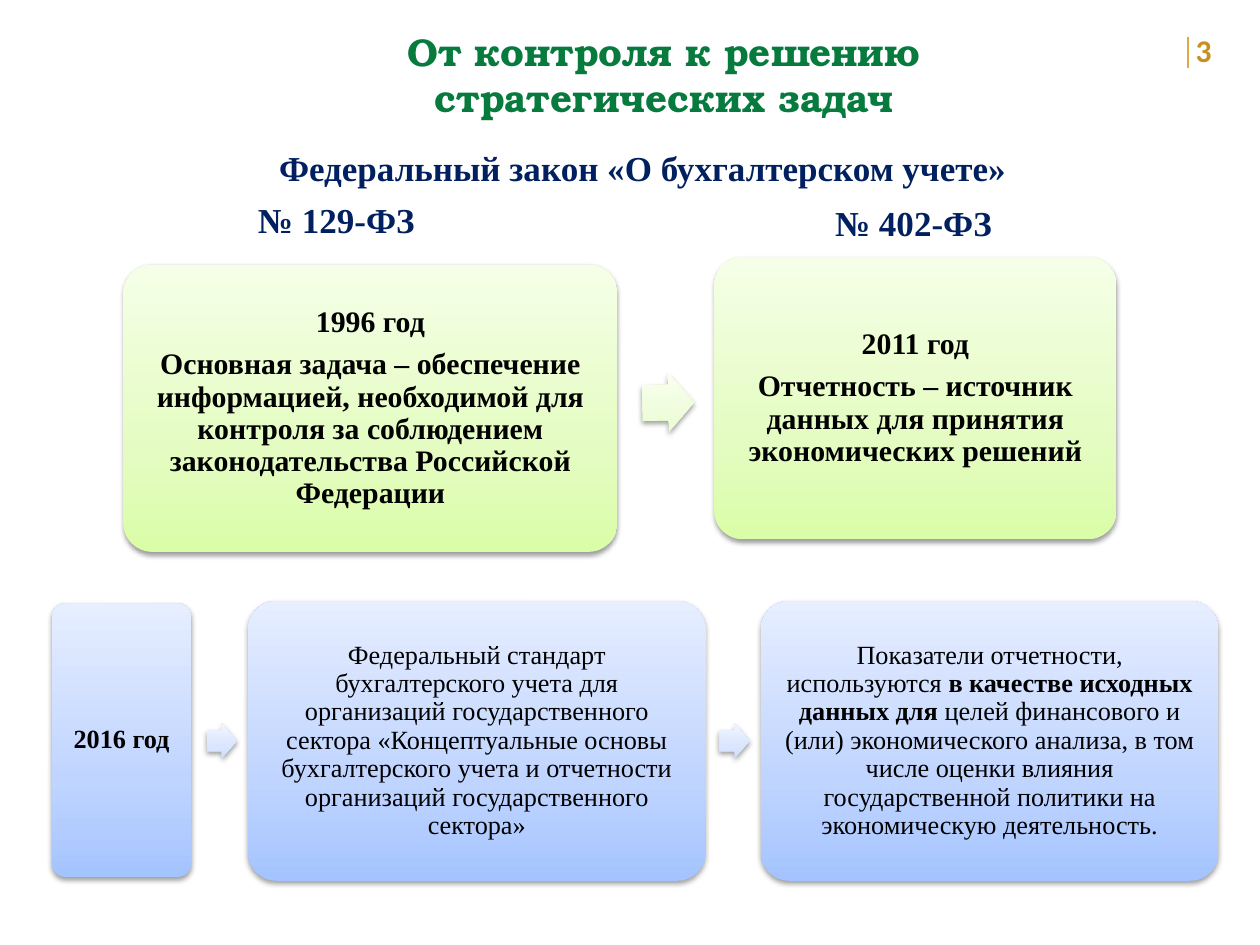
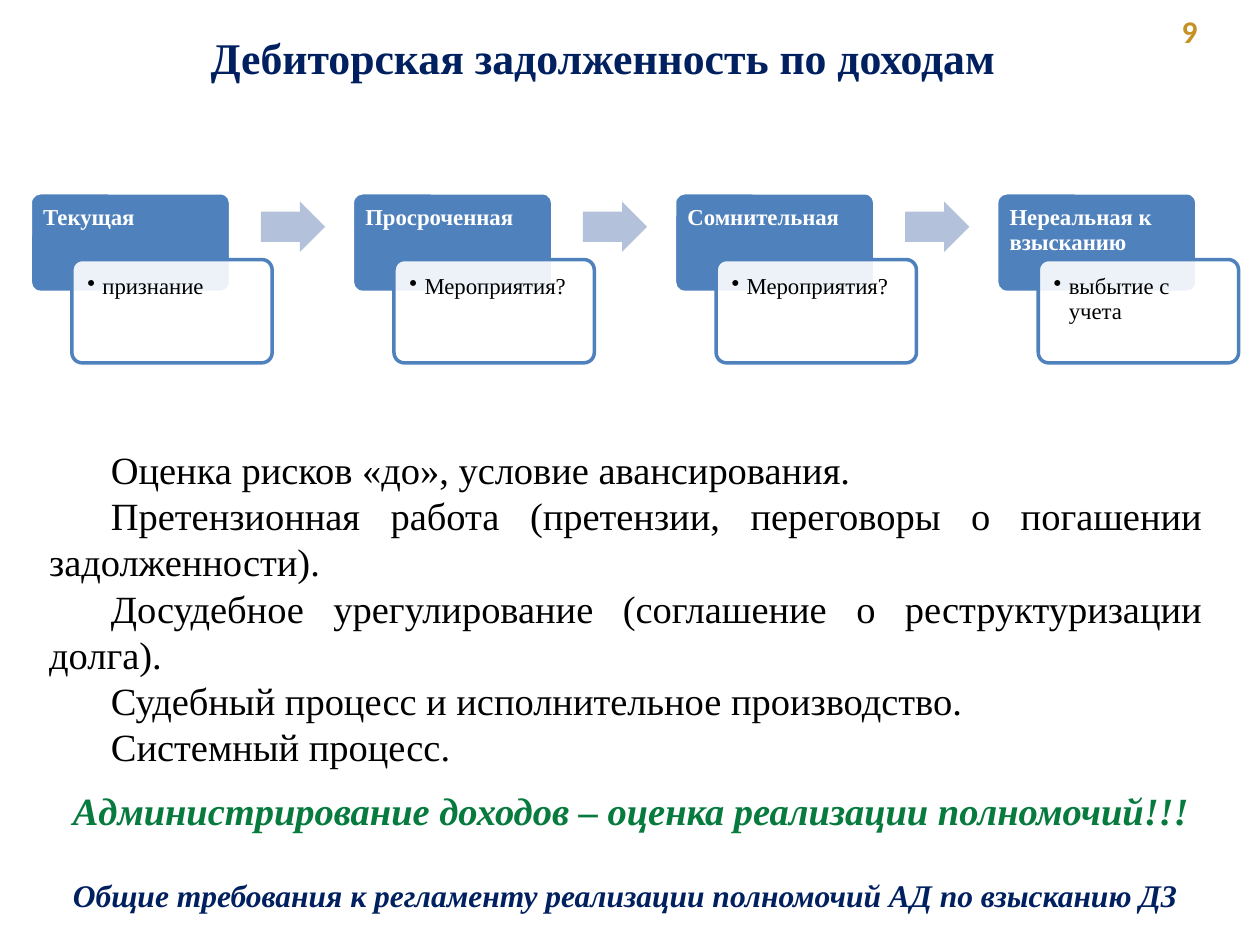
"""Build two slides on accounting law and on receivables."""
from lxml.etree import SubElement as Sub
from pptx import Presentation
from pptx.dml.color import RGBColor as RGB
from pptx.enum.shapes import MSO_CONNECTOR as CONN, MSO_SHAPE as SHAPE
from pptx.enum.text import MSO_ANCHOR as ANCHOR, MSO_AUTO_SIZE as AUTO, PP_ALIGN as AL
from pptx.oxml.ns import qn
from pptx.util import Inches, Pt

COLORS = {
    "green": "077A3E", "navy": "002060", "gold": "C79023", "rule": "DEAA46",
    "black": "000000", "white": "FFFFFF", "blue": "4F81BD", "pale": "B3C1DB",
}
GRADIENTS = {
    "lime": ("DAFDA7", "E4FCC2", "F5FFE7"),
    "lime_arrow": ("E9FDCF", "EFFDDC", "F9FFF1"),
    "sky": ("A4C4FF", "BFD4FF", "E6EEFF"),
    "sky_arrow": ("CDDDFE", "DBE6FE", "F0F5FF"),
}
STOPS = (0, 35000, 100000)
SERIF = "Times New Roman"
BOLD = {"bold": True}
CARD = {"line_spacing": 0.9, "space_after": Pt(6), "alignment": AL.CENTER}
STEP = {"line_spacing": 0.9, "space_after": Pt(2), "alignment": AL.LEFT}
CENTER = {"alignment": AL.CENTER}
JUSTIFY = {"alignment": AL.JUSTIFY, "space_before": Pt(0)}


def write(s, paras, size, color, para, font=None, insets=(0.1, 0.05, 0.1, 0.05),
          anchor=ANCHOR.TOP, indent=(0, 0), bullet=None):
    """Fill a shape with paragraphs, each a string or a list of (text, bold) runs."""
    tf = s.text_frame
    frame = dict(zip(("margin_left", "margin_top", "margin_right", "margin_bottom"),
                     map(Inches, insets)))
    frame.update(word_wrap=True, auto_size=AUTO.NONE, vertical_anchor=anchor)
    for name, value in frame.items():
        setattr(tf, name, value)
    for i, runs in enumerate(paras):
        p = tf.add_paragraph() if i else tf.paragraphs[0]
        for name, value in para.items():
            setattr(p, name, value)
        pPr = p._p.get_or_add_pPr()
        pPr.set("marL", str(Inches(indent[0])))
        pPr.set("indent", str(Inches(indent[1])))
        if bullet:
            Sub(pPr, qn("a:buChar"), char=bullet)
        else:
            Sub(pPr, qn("a:buNone"))
        for text, bold in [(runs, False)] if isinstance(runs, str) else runs:
            r = p.add_run()
            r.text = text
            look = {"name": SERIF, "size": Pt(size), "bold": bold, **(font or {})}
            for name, value in look.items():
                setattr(r.font, name, value)
            r.font.color.rgb = RGB.from_string(COLORS[color])


def draw(sld, kind, box, fill, line=None, alpha=None):
    """Add a preset shape with a flat fill, or a gradient fill and a soft shadow."""
    s = sld.shapes.add_shape(kind, *map(Inches, box))
    s.shadow.inherit = False
    s.adjustments[0] = 0.1 if kind == SHAPE.ROUNDED_RECTANGLE else 0.6
    spPr = s._element.spPr
    if fill in GRADIENTS:
        s.fill.gradient()
        s.fill.gradient_angle = 90
        stops = spPr.find(".//" + qn("a:gsLst"))
        stops[:] = []
        for pos, color in zip(STOPS, GRADIENTS[fill]):
            Sub(Sub(stops, qn("a:gs"), pos=str(pos)), qn("a:srgbClr"), val=color)
        shadow = Sub(spPr.find(qn("a:effectLst")), qn("a:outerShdw"), blurRad=str(Pt(3.1)),
                     dist=str(Pt(1.6)), dir="5400000", rotWithShape="0")
        tint = Sub(shadow, qn("a:srgbClr"), val=COLORS["black"])
        Sub(tint, qn("a:alpha"), val="38000")
    else:
        s.fill.solid()
        s.fill.fore_color.rgb = RGB.from_string(COLORS[fill])
        if alpha:
            Sub(spPr.find(".//" + qn("a:srgbClr")), qn("a:alpha"), val=str(alpha * 1000))
    if line:
        s.line.color.rgb = RGB.from_string(COLORS[line])
        s.line.width = Pt(2)
    else:
        s.line.fill.background()
    return s


prs = Presentation()
prs.slide_width, prs.slide_height = Inches(10), Inches(7.5)

heads = [
    (5, "От контроля к решению стратегических задач", (2.72, 0.17, 5.04, 0.84), 22, "green",
     "TeX Gyre Bonum", 0.06, "3", (9.39, 0.2, 0.61, 0.4)),
    (1, "Дебиторская задолженность по доходам", (0.63, 0.19, 8.31, 0.52), 25, "navy",
     SERIF, 0, "9", (9.28, 0.05, 0.55, 0.4)),
]
for layout, title, box, size, color, face, indent, number, number_box in heads:
    sld = prs.slides.add_slide(prs.slide_layouts[layout])
    s = sld.shapes.title
    s.left, s.top, s.width, s.height = map(Inches, box)
    write(s, [title], size, color, CENTER, {"name": face, "bold": True}, indent=(indent, 0))
    s = sld.shapes.add_textbox(*map(Inches, number_box))
    write(s, [number], 18, "gold", {}, {"name": "Calibri", "bold": True})
law, debt = prs.slides

rule = law.shapes.add_connector(CONN.STRAIGHT, *map(Inches, (9.43, 0.29, 9.43, 0.54)))
rule.line.color.rgb = RGB.from_string(COLORS["rule"])
rule.line.width = Pt(1)
Sub(rule._element.spPr, qn("a:effectLst"))

captions = [
    ("Федеральный закон «О бухгалтерском учете»", (0.59, 1.11, 9.02, 0.44)),
    ("№ 129-ФЗ", (1.73, 1.53, 1.88, 0.44)),
    ("№ 402-ФЗ", (6.31, 1.55, 1.88, 0.44)),
]
for text, box in captions:
    write(law.shapes.add_textbox(*map(Inches, box)), [text], 20, "navy", CENTER, BOLD)

cards = [
    ("lime", (0.98, 2.1, 3.92, 2.28), 17, [
        [("1996 год", True)],
        [("Основная задача – обеспечение информацией, необходимой для контроля "
          "за соблюдением законодательства Российской Федерации", True)]]),
    ("lime", (5.67, 2.04, 3.19, 2.24), 17, [
        [("2011 год", True)],
        [("Отчетность – источник данных для принятия экономических решений", True)]]),
    ("sky", (0.41, 4.79, 1.11, 2.17), 15, [[("2016 год", True)]]),
    ("sky", (1.97, 4.77, 3.63, 2.22), 15, [
        "Федеральный стандарт бухгалтерского учета для организаций государственного "
        "сектора «Концептуальные основы бухгалтерского учета и отчетности организаций "
        "государственного сектора»"]),
    ("sky", (6.04, 4.77, 3.63, 2.22), 15, [[
        ("Показатели отчетности, используются ", False),
        ("в качестве исходных данных для", True),
        (" целей финансового и (или) экономического анализа, в том числе оценки влияния "
         "государственной политики на экономическую деятельность.", False)]]),
]
for fill, box, size, paras in cards:
    s = draw(law, SHAPE.ROUNDED_RECTANGLE, box, fill)
    write(s, paras, size, "black", CARD, insets=(0.06,) * 4, anchor=ANCHOR.MIDDLE)

draw(law, SHAPE.RIGHT_ARROW, (5.1, 2.96, 0.41, 0.47), "lime_arrow").rotation = 359
for left in (1.64, 5.71):
    draw(law, SHAPE.RIGHT_ARROW, (left, 5.74, 0.24, 0.28), "sky_arrow")

steps = [
    ("Текущая", "признание"),
    ("Просроченная", "Мероприятия?"),
    ("Сомнительная", "Мероприятия?"),
    ("Нереальная к взысканию", "выбытие с учета"),
]
pitch = (7.91 - 0.24) / (len(steps) - 1)
for i, (stage, action) in enumerate(steps):
    left = 0.24 + i * pitch
    s = draw(debt, SHAPE.ROUNDED_RECTANGLE, (left, 1.53, 1.59, 0.79), "blue", "white")
    write(s, [stage], 13, "white", STEP, BOLD, insets=(0.08, 0.08, 0.08, 0.05))
    s = draw(debt, SHAPE.ROUNDED_RECTANGLE, (left + 0.33, 2.06, 1.59, 0.82), "white", "blue", 90)
    write(s, [action], 13, "black", STEP, insets=(0.1,) * 4, indent=(0.12, -0.12), bullet="•")
    if i < len(steps) - 1:
        draw(debt, SHAPE.RIGHT_ARROW, (left + 1.83, 1.6, 0.51, 0.4), "pale")

s = debt.placeholders[1]
s.left, s.top, s.width, s.height = map(Inches, (0.24, 3.49, 9.4, 2.71))
measures = [
    "Оценка рисков «до», условие авансирования.",
    "Претензионная работа (претензии, переговоры о погашении задолженности).",
    "Досудебное урегулирование (соглашение о реструктуризации долга).",
    "Судебный процесс и исполнительное производство.",
    "Системный процесс.",
]
write(s, measures, 22, "black", JUSTIFY, indent=(0.05, 0.49))

conclusions = [
    ("Администрирование доходов – оценка реализации полномочий!!!", 6.2, 22, "green"),
    ("Общие требования к регламенту реализации полномочий АД по взысканию ДЗ", 6.9, 18, "navy"),
]
for text, top, size, color in conclusions:
    s = debt.shapes.add_textbox(*map(Inches, (0.43, top, 9.4, 0.57)))
    write(s, [text], size, color, JUSTIFY, {"bold": True, "italic": True}, indent=(0.05, 0))

prs.save("out.pptx")
